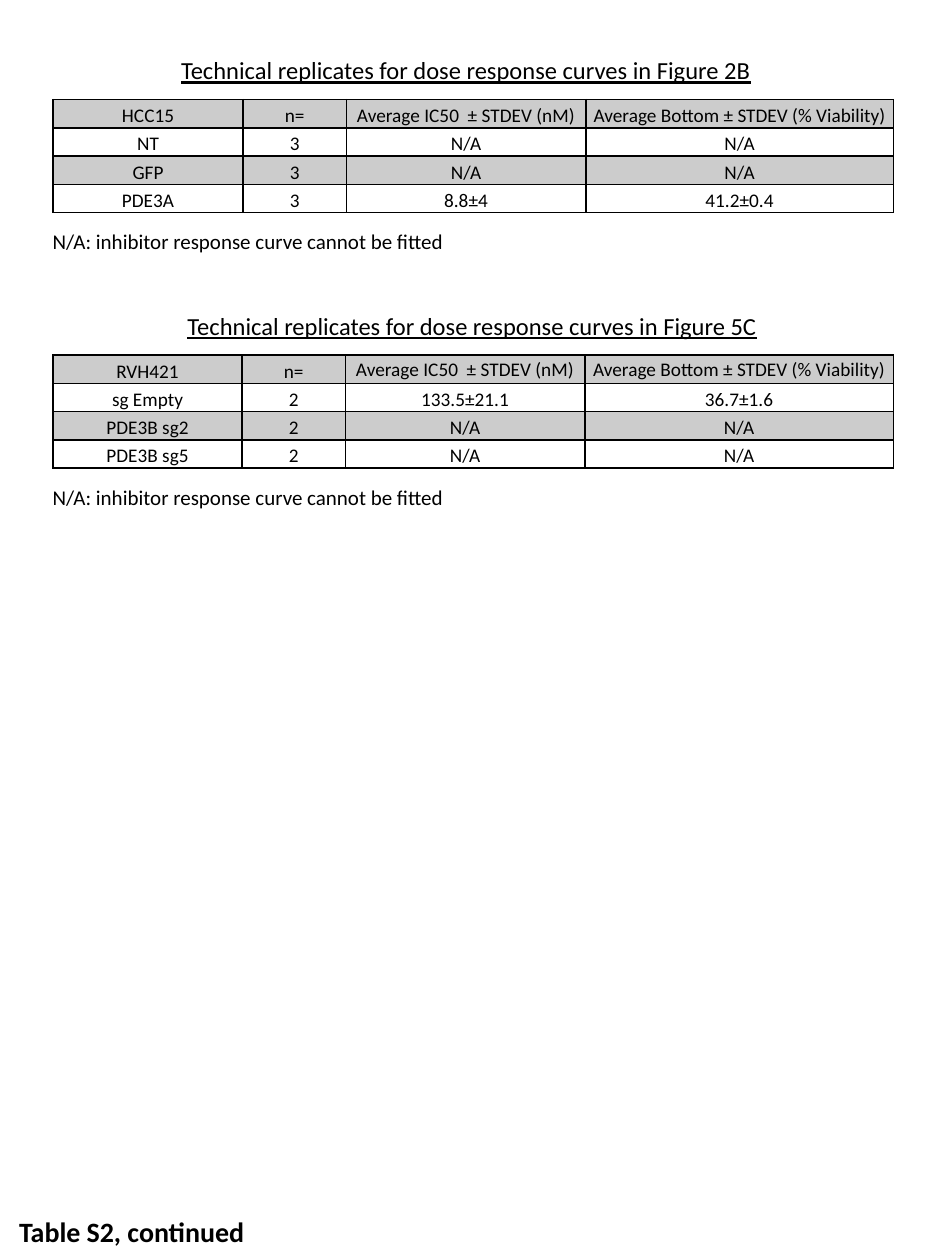
import pptx
import pptx.dml.color
import pptx.enum.text
import pptx.oxml
import pptx.oxml.ns
import pptx.util
from pptx.util import Cm

BLACK = pptx.dml.color.RGBColor(0, 0, 0)
FONT = "Calibri"
ALIGN = pptx.enum.text.PP_ALIGN
ANCHOR = pptx.enum.text.MSO_ANCHOR
NS = pptx.oxml.ns.nsdecls("a")

HEADS = ["n=", "Average IC50  ± STDEV (nM)", "Average Bottom ± STDEV (% Viability)"]
NOTE = "N/A: inhibitor response curve cannot be fitted"


class Page:
    def __init__(self, deck):
        self.slide = deck.slides.add_slide(deck.slide_layouts[5])

    def style(self, frame, size, bold=False, line=False, align=ALIGN.LEFT):
        for para in frame.paragraphs:
            para.alignment = align
            for run in para.runs:
                font = run.font
                font.name, font.size = FONT, pptx.util.Pt(size)
                font.bold, font.underline = bold, line
                font.color.rgb = BLACK

    def fit(self, frame):
        frame.word_wrap = False
        frame.auto_size = pptx.enum.text.MSO_AUTO_SIZE.SHAPE_TO_FIT_TEXT
        frame.vertical_anchor = ANCHOR.TOP

    def title(self, text, left, top, width, height):
        box = self.slide.shapes.title
        box.left, box.top, box.width, box.height = left, top, width, height
        box.text_frame.text = text
        self.fit(box.text_frame)
        self.style(box.text_frame, 16, bold=True)

    def text(self, text, left, top, width, height, size, line=False):
        box = self.slide.shapes.add_textbox(left, top, width, height)
        box.text_frame.text = text
        self.fit(box.text_frame)
        self.style(box.text_frame, size, line=line)

    def cell(self, cell, text, shade, anchor):
        cell.text_frame.text = text
        cell.vertical_anchor = anchor
        cell.margin_left = cell.margin_right = cell.margin_top = Cm(0.03)
        cell.margin_bottom = 0
        self.style(cell.text_frame, 11, align=ALIGN.CENTER)
        # Black borders, 1 pt
        props = cell._tc.get_or_add_tcPr()
        for side in "LRTB":
            props.append(pptx.oxml.parse_xml(
                f'<a:ln{side} {NS} w="12700"><a:solidFill>'
                f'<a:srgbClr val="{BLACK}"/></a:solidFill></a:ln{side}>'))
        # Shaded rows are black at 20 % opacity
        if shade:
            cell.fill.solid()
            cell.fill.fore_color.rgb = BLACK
            color = props.find(".//" + pptx.oxml.ns.qn("a:solidFill") + "[last()]")
            color = props.find(pptx.oxml.ns.qn("a:solidFill"))[0]
            color.append(pptx.oxml.parse_xml(f'<a:alpha {NS} val="20000"/>'))
        else:
            cell.fill.background()

    def table(self, rows, left, top, widths, mid):
        high = Cm(0.57)
        grid = self.slide.shapes.add_table(
            len(rows), len(widths), left, top, sum(widths), high * len(rows)).table
        grid.first_row = grid.horz_banding = False
        for col, width in zip(grid.columns, widths):
            col.width = width
        for r, row in enumerate(rows):
            grid.rows[r].height = high
            for c, text in enumerate(row):
                anchor = ANCHOR.MIDDLE if mid and r == 0 and c > 1 else ANCHOR.BOTTOM
                self.cell(grid.cell(r, c), text, r % 2 == 0, anchor)


def main():
    deck = pptx.Presentation()
    deck.slide_width, deck.slide_height = Cm(19.05), Cm(25.4)
    page = Page(deck)

    # Page label
    page.title("Table S2, continued", Cm(0.13), Cm(24.36), Cm(5.11), Cm(0.94))

    # Figure, heading left, table top, first and last column, centred heads, rows
    parts = [
        ("2B", 3.4, 2.01, 3.83, 6.2, False, [
            ["HCC15"] + HEADS,
            ["NT", "3", "N/A", "N/A"],
            ["GFP", "3", "N/A", "N/A"],
            ["PDE3A", "3", "8.8±4", "41.2±0.4"]]),
        ("5C", 3.53, 7.16, 3.81, 6.22, True, [
            ["RVH421"] + HEADS,
            ["sg Empty", "2", "133.5±21.1", "36.7±1.6"],
            ["PDE3B sg2", "2", "N/A", "N/A"],
            ["PDE3B sg5", "2", "N/A", "N/A"]]),
    ]

    # Heading, table and note of each figure
    for fig, left, top, first, last, mid, rows in parts:
        page.text(f"Technical replicates for dose response curves in Figure {fig}",
                  Cm(left), Cm(top - 1.02), Cm(12.09), Cm(0.86), 14, line=True)
        widths = [Cm(first), Cm(2.08), Cm(4.83), Cm(last)]
        page.table(rows, Cm(1.07), Cm(top), widths, mid)
        page.text(NOTE, Cm(0.81), Cm(top + 2.48), Cm(8.59), Cm(0.76), 12)

    deck.save("out.pptx")


if __name__ == "__main__":
    main()
